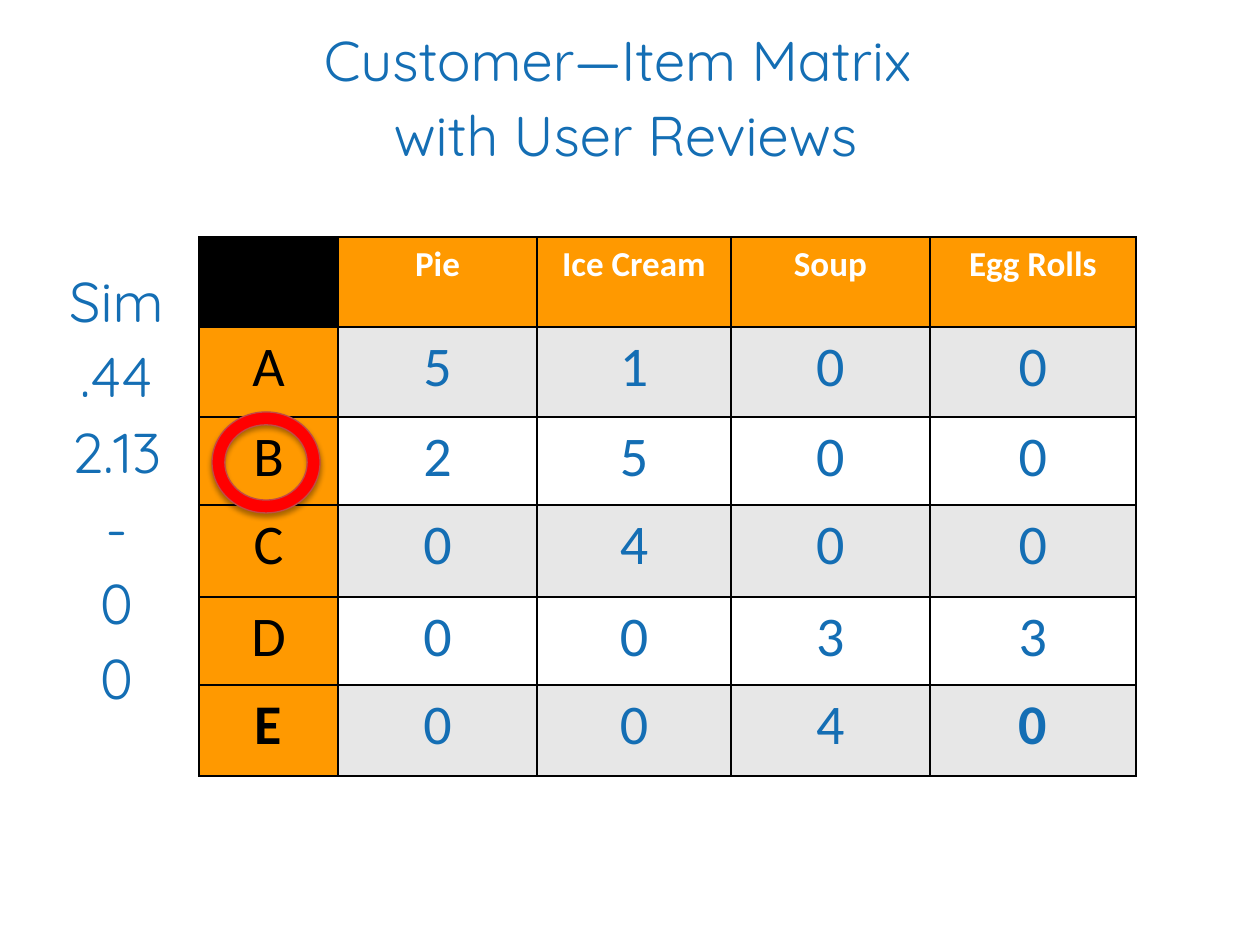
from lxml import etree
from pptx import Presentation
from pptx import util as u
from pptx.dml.color import RGBColor
from pptx.enum import shapes, text
from pptx.oxml import ns

SCALE = u.Inches(1) / 126  # EMU per px

BLUE, ORANGE, GREY = "146EB4", "FF9900", "E7E7E7"
WHITE, BLACK, RED, RUST = "FFFFFF", "000000", "FF0000", "BF4C48"

DISHES = ["", "Pie", "Ice Cream", "Soup", "Egg Rolls"]
REVIEWS = {
    "A": [5, 1, 0, 0],
    "B": [2, 5, 0, 0],
    "C": [0, 4, 0, 0],
    "D": [0, 0, 3, 3],
    "E": [0, 0, 4, 0],
}
SIMILARITIES = ["Sim", ".44", "2.13", "-", "0", "0"]


def px(length):
    return u.Emu(round(length * SCALE))


def color(value):
    return RGBColor.from_string(value)


def child(parent, tag, **attributes):
    return etree.SubElement(parent, ns.qn(tag), attributes)


def apply(target, values):
    for name, value in values.items():
        setattr(target, name, value)


class Deck:
    """Holds the style and the current slide."""

    heading = {"name": "Quicksand", "size": u.Pt(32), "bold": False}
    number = {"name": "Calibri", "size": u.Pt(32), "bold": False}
    label = {"name": "Calibri", "size": u.Pt(20), "bold": True}
    frame = {
        "word_wrap": True,
        "auto_size": text.MSO_AUTO_SIZE.NONE,
        "vertical_anchor": text.MSO_ANCHOR.TOP,
    }
    gap = u.Pt(4.7)

    def __init__(self, width, height):
        self.prs = Presentation()
        apply(self.prs, {"slide_width": px(width), "slide_height": px(height)})
        self.slide = self.prs.slides.add_slide(self.prs.slide_layouts[1])

    def place(self, shape, box):
        apply(shape, dict(zip(("left", "top", "width", "height"), map(px, box))))

    def add_words(self, paragraph, words, style, ink):
        paragraph.alignment = text.PP_ALIGN.CENTER
        run = paragraph.add_run()
        run.text = words
        apply(run.font, style)
        run.font.color.rgb = color(ink)

    def lines(self, index, words, box):
        """Fill a placeholder with centred, unbulleted lines."""
        holder = self.slide.placeholders[index]
        self.place(holder, box)
        frame = holder.text_frame
        apply(frame, self.frame)
        for i, line in enumerate(words):
            paragraph = frame.add_paragraph() if i else frame.paragraphs[0]
            properties = paragraph._p.get_or_add_pPr()
            properties.set("marL", "0")
            properties.set("indent", "0")
            child(properties, "a:buNone")
            paragraph.space_before = self.gap if i else u.Pt(0)
            self.add_words(paragraph, line, self.heading, BLUE)

    def border(self, cell):
        properties = cell._tc.get_or_add_tcPr()
        for i, side in enumerate("LRTB"):
            line = child(properties, f"a:ln{side}", w=str(u.Pt(1)))
            child(child(line, "a:solidFill"), "a:srgbClr", val=BLACK)
            properties.insert(i, line)  # borders come before the fill

    def cell(self, cell, words, style, ink, fill):
        cell.fill.solid()
        cell.fill.fore_color.rgb = color(fill)
        self.border(cell)
        if words:
            self.add_words(cell.text_frame.paragraphs[0], words, style, ink)

    def matrix(self, left, top, widths, heights):
        box = map(px, (left, top, sum(widths), sum(heights)))
        table = self.slide.shapes.add_table(len(heights), len(widths), *box).table
        for column, width in zip(table.columns, widths):
            column.width = px(width)
        for row, height in zip(table.rows, heights):
            row.height = px(height)

        # Header row
        for c, dish in enumerate(DISHES):
            self.cell(table.cell(0, c), dish, self.label, WHITE, ORANGE if dish else BLACK)

        # Customers and their reviews; the outer cells of the last row are bold
        last = len(REVIEWS)
        for r, (customer, scores) in enumerate(REVIEWS.items(), 1):
            for c, value in enumerate([customer, *scores]):
                bold = r == last and c in (0, len(scores))
                ink, fill = (BLUE, GREY if r % 2 else WHITE) if c else (BLACK, ORANGE)
                self.cell(table.cell(r, c), str(value), {**self.number, "bold": bold}, ink, fill)

    def ring(self, box, thickness):
        ring = self.slide.shapes.add_shape(shapes.MSO_SHAPE.DONUT, *map(px, box))
        ring.adjustments[0] = thickness
        ring.fill.solid()
        ring.fill.fore_color.rgb = color(RED)
        ring.line.color.rgb = color(RUST)
        ring.line.width = u.Pt(0.75)
        ring.shadow.inherit = False
        effects = ring._element.spPr.find(ns.qn("a:effectLst"))
        shadow = child(effects, "a:outerShdw", blurRad=str(u.Pt(3.1)), dist=str(u.Pt(1.8)),
                       dir="5400000", rotWithShape="0")
        child(child(shadow, "a:srgbClr", val=BLACK), "a:alpha", val="35000")


def main():
    deck = Deck(1260, 945)
    # Title and similarity scores
    deck.lines(0, ["Customer—Item Matrix ", "with User Reviews"], (34, 19, 1183, 176))
    deck.lines(1, SIMILARITIES, (34, 260, 165, 626))
    # Review matrix with customer B circled
    deck.matrix(199, 237, [139, 199, 194, 199, 206], [90, 90, 88, 92, 88, 91])
    deck.ring((212, 412, 108, 101), 0.127)
    deck.prs.save("out.pptx")


if __name__ == "__main__":
    main()
